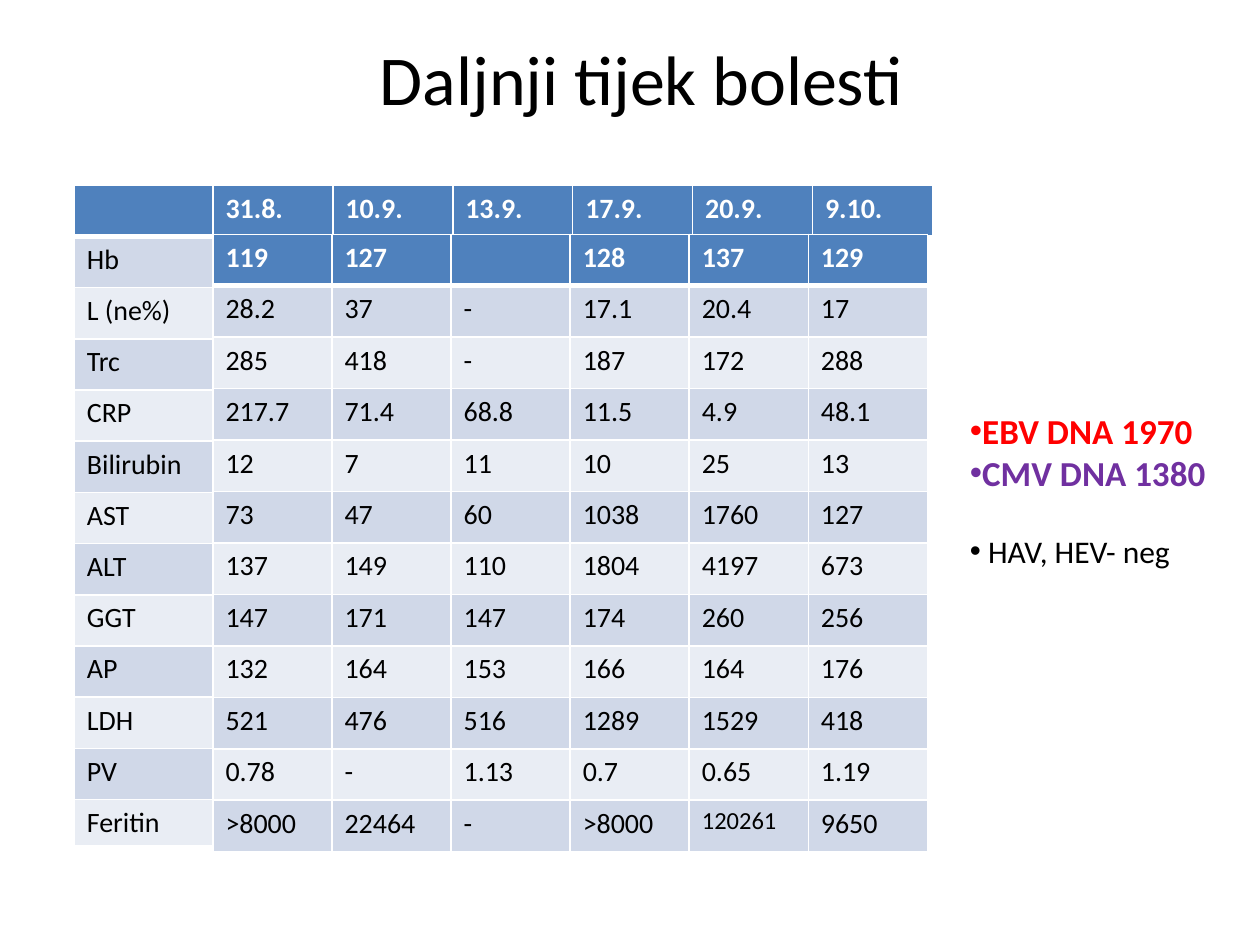
from pptx import Presentation
from pptx.dml.color import RGBColor
from pptx.enum.text import MSO_ANCHOR, MSO_AUTO_SIZE, PP_ALIGN
from pptx.oxml import parse_xml
from pptx.oxml.ns import nsdecls
from pptx.util import Inches, Pt

BLACK = RGBColor(0x00, 0x00, 0x00)
WHITE = RGBColor(0xFF, 0xFF, 0xFF)
HEADER_BLUE = RGBColor(0x4F, 0x81, 0xBD)
BAND_DARK = RGBColor(0xD0, 0xD8, 0xE8)
BAND_LIGHT = RGBColor(0xE9, 0xED, 0xF4)
RED = RGBColor(0xFF, 0x00, 0x00)
PURPLE = RGBColor(0x70, 0x30, 0xA0)
FONT = "Calibri"

LABELS = ["", "Hb", "L (ne%)", "Trc", "CRP", "Bilirubin", "AST", "ALT",
          "GGT", "AP", "LDH", "PV", "Feritin"]
RESULTS = {
    "31.8.": ["119", "28.2", "285", "217.7", "12", "73", "137", "147",
              "132", "521", "0.78", ">8000"],
    "10.9.": ["127", "37", "418", "71.4", "7", "47", "149", "171",
              "164", "476", "-", "22464"],
    "13.9.": ["", "-", "-", "68.8", "11", "60", "110", "147",
              "153", "516", "1.13", "-"],
    "17.9.": ["128", "17.1", "187", "11.5", "10", "1038", "1804", "174",
              "166", "1289", "0.7", ">8000"],
    "20.9.": ["137", "20.4", "172", "4.9", "25", "1760", "4197", "260",
              "164", "1529", "0.65", "120261"],
    "9.10.": ["129", "17", "288", "48.1", "13", "127", "673", "256",
              "176", "418", "1.19", "9650"],
}

LABEL_LEFT, DATES_LEFT = 0.59, 1.69
HEADER_TOP, RESULTS_TOP = 1.47, 1.86
LABEL_WIDTH, DATE_WIDTH, RESULT_WIDTH = 1.12, 5.71 / 6, 5.67 / 6
HEADER_HEIGHT, LABEL_HEIGHT, RESULT_HEIGHT = 0.41, 4.88 / 12, 4.9 / 12
LAST_LABEL_HEIGHT = 0.35


def format_runs(para, size, color, bold=False):
    for span in para.runs:
        span.font.name = FONT
        span.font.size = Pt(size)
        span.font.bold = bold
        span.font.color.rgb = color


def set_borders(cell, top=1, bottom=1):
    """Give the cell white edges, with widths in points."""
    widths = {"lnL": 1, "lnR": 1, "lnT": top, "lnB": bottom}
    properties = cell._tc.get_or_add_tcPr()
    for index, (tag, width) in enumerate(widths.items()):
        properties.insert(index, parse_xml(
            f'<a:{tag} {nsdecls("a")} w="{Pt(width)}"><a:solidFill>'
            f'<a:srgbClr val="{WHITE}"/></a:solidFill></a:{tag}>'))


def fill_cell(cell, text, row):
    header = row == 0
    cell.text_frame.text = text
    size = 14 if len(text) == 6 and text.isdigit() else 16
    format_runs(cell.text_frame.paragraphs[0], size,
                WHITE if header else BLACK, header)
    cell.fill.solid()
    cell.fill.fore_color.rgb = (
        HEADER_BLUE if header else BAND_DARK if row % 2 else BAND_LIGHT)
    set_borders(cell, top=3 if row == 1 else 1, bottom=3 if header else 1)


def add_grid(page, left, top, rows, column_width, row_height):
    """Add a table whose first row is the header, and return it."""
    columns = len(rows[0])
    frame = page.shapes.add_table(
        len(rows), columns, Inches(left), Inches(top),
        Inches(column_width * columns), Inches(row_height * len(rows)))
    table = frame.table
    for column in table.columns:
        column.width = Inches(column_width)
    for row, texts in enumerate(rows):
        table.rows[row].height = Inches(row_height)
        for column, text in enumerate(texts):
            fill_cell(table.cell(row, column), text, row)
    return table


def add_text_box(page, left, top, width, height):
    box = page.shapes.add_textbox(
        Inches(left), Inches(top), Inches(width), Inches(height))
    box.text_frame.word_wrap = True
    return box.text_frame


def add_title(page, text):
    frame = add_text_box(page, LABEL_LEFT, -0.01, 9, 1.25)
    frame.vertical_anchor = MSO_ANCHOR.MIDDLE
    frame.text = text
    para = frame.paragraphs[0]
    para.alignment = PP_ALIGN.CENTER
    format_runs(para, 40, BLACK)


def add_findings(page):
    findings = [("EBV DNA 1970", 20, RED, True, 0),
                ("CMV DNA 1380", 20, PURPLE, True, 0),
                (" HAV, HEV- neg", 18, BLACK, False, 22)]
    frame = add_text_box(page, 7.6, 3.2, 2.4, 1.38)
    frame.auto_size = MSO_AUTO_SIZE.SHAPE_TO_FIT_TEXT
    frame.text = "\n".join(finding[0] for finding in findings)
    for para, (_, size, color, bold, gap) in zip(frame.paragraphs, findings):
        format_runs(para, size, color, bold)
        para.space_before = Pt(gap)
        properties = para._p.get_or_add_pPr()
        properties.append(parse_xml(
            f'<a:buFont {nsdecls("a")} typeface="Arial"/>'))
        properties.append(parse_xml(f'<a:buChar {nsdecls("a")} char="•"/>'))


def main():
    deck = Presentation()
    deck.slide_width, deck.slide_height = Inches(10), Inches(7.5)
    page = deck.slides.add_slide(deck.slide_layouts[6])

    add_title(page, "Daljnji tijek bolesti")
    labels = add_grid(page, LABEL_LEFT, HEADER_TOP,
                      [[label] for label in LABELS], LABEL_WIDTH, LABEL_HEIGHT)
    labels.rows[len(LABELS) - 1].height = Inches(LAST_LABEL_HEIGHT)
    add_grid(page, DATES_LEFT, HEADER_TOP, [list(RESULTS)],
             DATE_WIDTH, HEADER_HEIGHT)
    for index, values in enumerate(RESULTS.values()):
        add_grid(page, DATES_LEFT + index * RESULT_WIDTH, RESULTS_TOP,
                 [[value] for value in values], RESULT_WIDTH, RESULT_HEIGHT)
    add_findings(page)

    deck.save("out.pptx")


if __name__ == "__main__":
    main()
